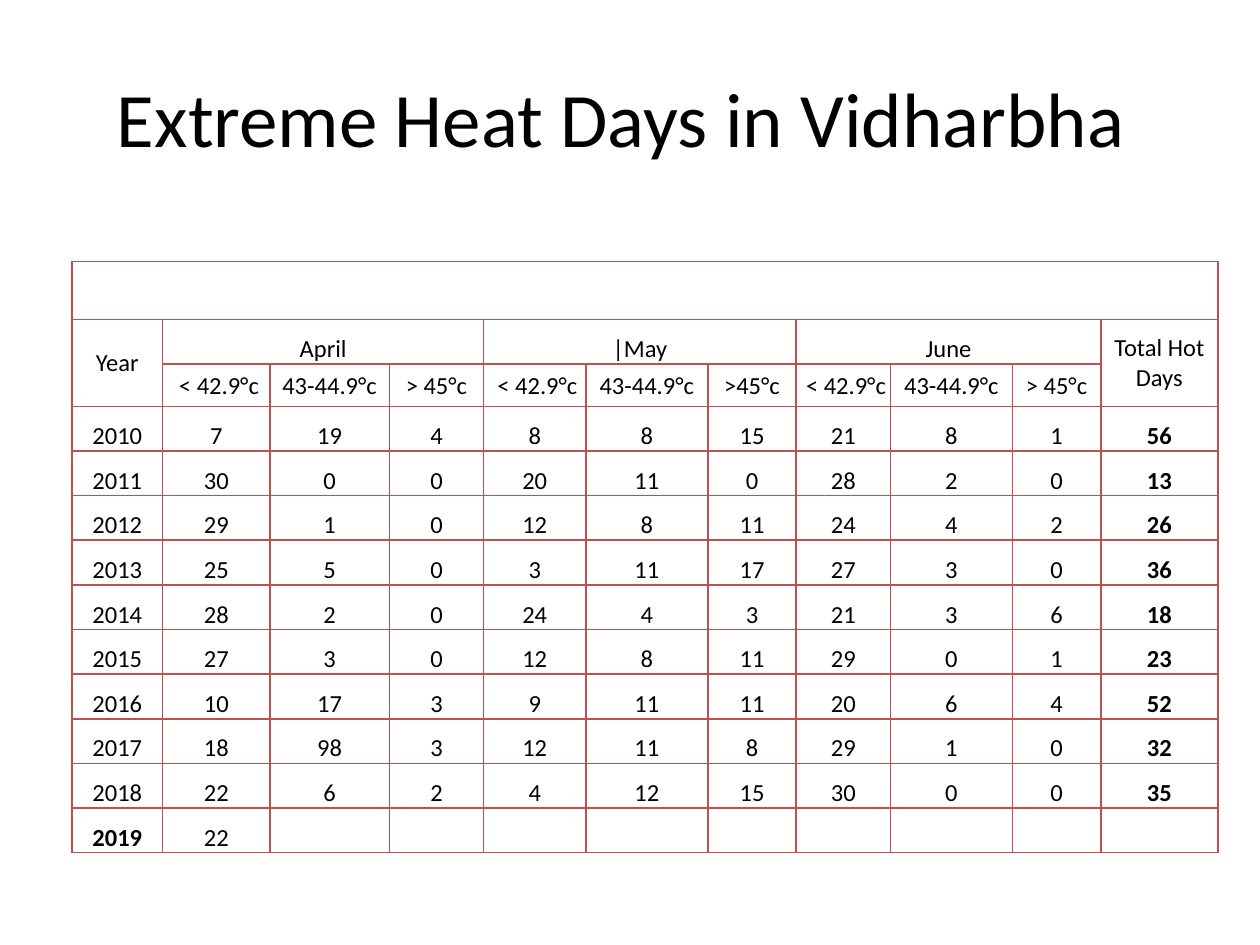
from lxml.etree import SubElement
from pptx import Presentation
from pptx.dml.color import RGBColor
from pptx.enum.text import MSO_ANCHOR as Anchor, PP_ALIGN as Align
from pptx.oxml.ns import qn
from pptx.util import Cm, Pt

BLACK = RGBColor(0x00, 0x00, 0x00)
BORDER_RED = RGBColor(0xC0, 0x50, 0x4D)
FONT = "Calibri"

COLUMN_WIDTHS = [1.83, 2.16, 2.41, 1.9, 2.06, 2.46, 1.78, 1.9, 2.46, 1.78, 2.36]
ROW_HEIGHTS = [1.17, 0.9, 0.85] + [0.9] * 10
MONTHS = ["April", "|May", "June"]
RANGES = [" < 42.9°c", "43-44.9°c", "> 45°c",
          " < 42.9°c", "43-44.9°c", ">45°c",
          " < 42.9°c", "43-44.9°c", "> 45°c"]
HEAT_DAYS = [
    [2010, 7, 19, 4, 8, 8, 15, 21, 8, 1, 56],
    [2011, 30, 0, 0, 20, 11, 0, 28, 2, 0, 13],
    [2012, 29, 1, 0, 12, 8, 11, 24, 4, 2, 26],
    [2013, 25, 5, 0, 3, 11, 17, 27, 3, 0, 36],
    [2014, 28, 2, 0, 24, 4, 3, 21, 3, 6, 18],
    [2015, 27, 3, 0, 12, 8, 11, 29, 0, 1, 23],
    [2016, 10, 17, 3, 9, 11, 11, 20, 6, 4, 52],
    [2017, 18, 98, 3, 12, 11, 8, 29, 1, 0, 32],
    [2018, 22, 6, 2, 4, 12, 15, 30, 0, 0, 35],
    [2019, 22],
]


def write_text(frame, text, size=14, bold=False, color=BLACK, align=Align.CENTER):
    """Write one formatted line into a text frame."""
    paragraph = frame.paragraphs[0]
    paragraph.alignment = align
    run = paragraph.add_run()
    run.text = text
    run.font.name = FONT
    run.font.size = Pt(size)
    run.font.bold = bold
    run.font.color.rgb = color


def style_cell(cell):
    """Clear the fill, tighten the margins and draw the four borders of a cell."""
    cell.margin_left = cell.margin_right = cell.margin_top = Cm(0.02)
    cell.margin_bottom = 0
    properties = cell._tc.get_or_add_tcPr()
    for side in ("a:lnL", "a:lnR", "a:lnT", "a:lnB"):
        line = SubElement(properties, qn(side), w=str(Pt(1)))
        fill = SubElement(line, qn("a:solidFill"))
        SubElement(fill, qn("a:srgbClr"), val=str(BORDER_RED))
    cell.fill.background()


def fill_cell(cell, text, anchor=Anchor.BOTTOM, **text_format):
    """Put anchored text into a cell."""
    cell.vertical_anchor = anchor
    write_text(cell.text_frame, text, **text_format)


def add_title(slide, left, top, width, height):
    """Add the slide heading."""
    box = slide.shapes.add_textbox(left, top, width, height)
    box.text_frame.word_wrap = True
    box.text_frame.vertical_anchor = Anchor.MIDDLE
    write_text(box.text_frame, "Extreme Heat Days in Vidharbha ", size=44)


def fill_header(table):
    """Merge and label the banner, month and temperature rows."""
    last = len(COLUMN_WIDTHS) - 1
    table.cell(0, 0).merge(table.cell(0, last))
    for column, label in ((0, "Year"), (last, "Total Hot Days")):
        table.cell(1, column).merge(table.cell(2, column))
        fill_cell(table.cell(1, column), label, Anchor.MIDDLE)
    for index, month in enumerate(MONTHS):
        first = 1 + 3 * index
        table.cell(1, first).merge(table.cell(1, first + 2))
        fill_cell(table.cell(1, first), month)
    for column, label in enumerate(RANGES, start=1):
        fill_cell(table.cell(2, column), label, Anchor.MIDDLE)


def add_heat_table(slide, left, top, width, height):
    """Add the table of hot days by year, month and temperature range."""
    frame = slide.shapes.add_table(len(ROW_HEIGHTS), len(COLUMN_WIDTHS),
                                   left, top, width, height)
    table = frame.table
    table.first_row = table.horz_banding = False
    for column, column_width in zip(table.columns, COLUMN_WIDTHS):
        column.width = Cm(column_width)
    for row, row_height in zip(table.rows, ROW_HEIGHTS):
        row.height = Cm(row_height)
    for cell in table.iter_cells():
        style_cell(cell)
    fill_header(table)
    for row, values in enumerate(HEAT_DAYS, start=3):
        for column, value in enumerate(values):
            is_total = column == len(COLUMN_WIDTHS) - 1
            fill_cell(table.cell(row, column), str(value),
                      bold=is_total or value == 2019)


def main():
    """Build and save the presentation."""
    presentation = Presentation()
    presentation.slide_width = Cm(25.4)
    presentation.slide_height = Cm(19.05)
    slide = presentation.slides.add_slide(presentation.slide_layouts[6])
    add_title(slide, Cm(1.27), Cm(0.76), Cm(22.86), Cm(3.18))
    add_heat_table(slide, Cm(1.45), Cm(5.27),
                   Cm(sum(COLUMN_WIDTHS)), Cm(sum(ROW_HEIGHTS)))
    presentation.save("out.pptx")


if __name__ == "__main__":
    main()
